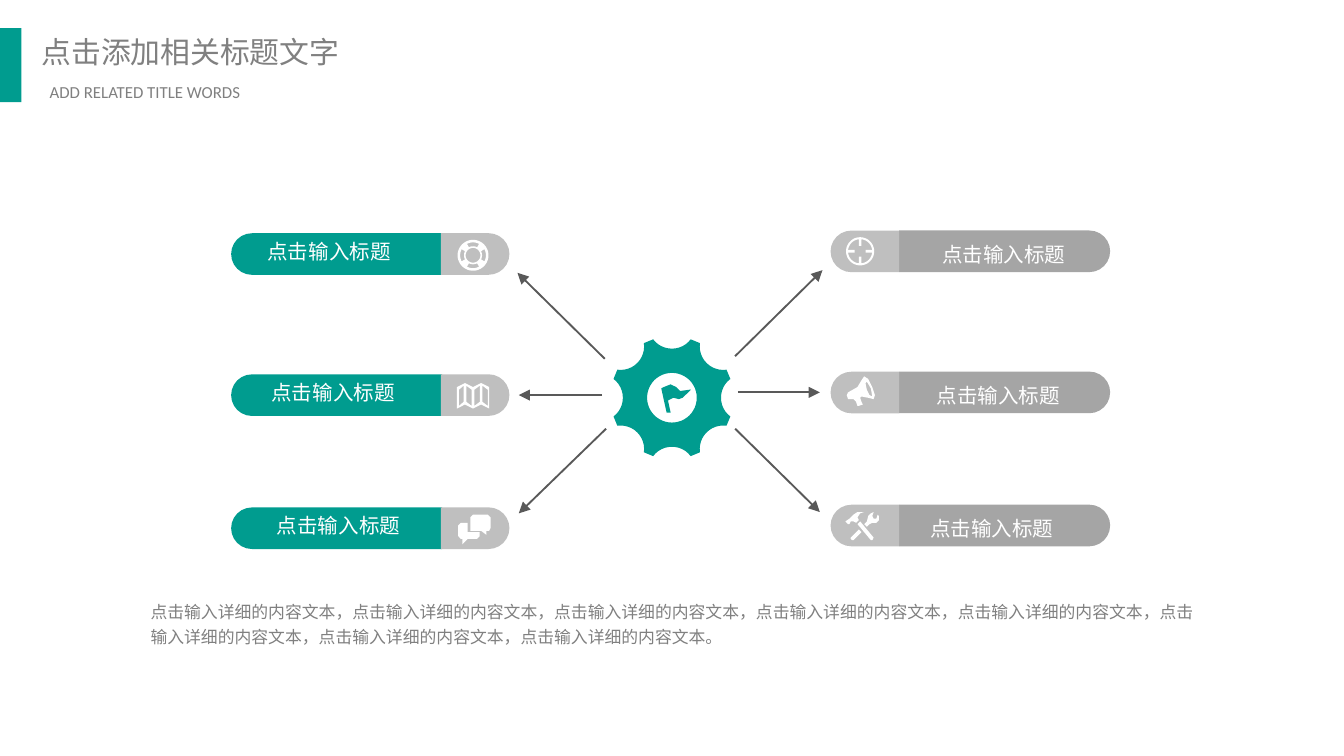
from dataclasses import dataclass
from math import cos, radians, sin

from lxml import etree
from pptx import Presentation, util as u
from pptx.dml.color import RGBColor
from pptx.enum import shapes, text
from pptx.oxml.ns import qn


@dataclass(frozen=True)
class Theme:
    teal: str = "009C8F"
    gray: str = "A5A5A5"
    pale: str = "BFBFBF"
    ink: str = "808080"
    arrow: str = "595959"
    white: str = "FFFFFF"
    cjk: str = "Noto Sans CJK SC"
    latin: str = "Calibri"
    title: float = 16
    label: float = 11
    small: float = 9


THEME = Theme()
WIDTH = 10
HEIGHT = WIDTH * 9 / 16
PILL_HEIGHT, PILL_LENGTH, CAP_LENGTH = 0.31, 1.57, 0.51
LEFT_ROWS, RIGHT_ROWS = (1.89, 2.94, 3.93), (1.87, 2.92, 3.91)
LABEL = "点击输入标题"
DETAIL = "，".join(["点击输入详细的内容文本"] * 8) + "。"
TITLE_INSETS = (0.08, 0.04, 0.08, 0.04)
LABEL_INSETS = (0.12, 0.06, 0.12, 0.06)

# Icon outlines in inches on the slide; a later outline inside an earlier one is a hole.
FLAG = [[(5.13, 2.9), (5.06, 2.91), (5.03, 2.88), (4.99, 2.86), (4.94, 2.88),
         (4.92, 2.89), (4.96, 3.07), (4.99, 3.07), (4.97, 2.98), (5.01, 2.96),
         (5.05, 2.97), (5.08, 2.96), (5.14, 2.9)]]
CHAT = [[(3.48, 3.96), (3.48, 3.89), (3.43, 3.89), (3.41, 3.91), (3.41, 3.99), (3.43, 4.01),
         (3.44, 4.01), (3.44, 4.05), (3.48, 4.01), (3.55, 4.01), (3.57, 3.99), (3.57, 3.96)],
        [(3.63, 3.83), (3.52, 3.83), (3.5, 3.85), (3.5, 3.95), (3.58, 3.95), (3.62, 3.98),
         (3.62, 3.95), (3.64, 3.95), (3.65, 3.93), (3.65, 3.85)]]
TOOLS = [[(6.33, 3.88), (6.35, 3.88), (6.37, 3.89), (6.39, 3.87), (6.38, 3.85), (6.4, 3.82),
          (6.43, 3.81), (6.38, 3.81), (6.35, 3.83), (6.33, 3.85), (6.32, 3.86), (6.29, 3.88),
          (6.31, 3.9), (6.32, 3.9)],
         [(6.4, 3.88), (6.38, 3.9), (6.48, 4.02), (6.49, 4.02), (6.5, 4)],
         [(6.54, 3.84), (6.53, 3.83), (6.52, 3.86), (6.5, 3.86), (6.49, 3.84), (6.5, 3.81),
          (6.48, 3.82), (6.46, 3.84), (6.45, 3.88), (6.43, 3.9), (6.45, 3.92), (6.47, 3.9),
          (6.49, 3.89), (6.52, 3.89), (6.54, 3.87)],
         [(6.33, 4), (6.33, 4.01), (6.34, 4.02), (6.35, 4.02), (6.41, 3.96), (6.39, 3.94)]]
MEGAPHONE = [[(6.49, 2.88), (6.46, 2.82), (6.43, 2.8), (6.41, 2.83), (6.38, 2.88), (6.31, 2.92),
              (6.3, 2.94), (6.31, 2.97), (6.35, 2.97), (6.37, 2.99), (6.38, 3.02), (6.39, 3.02),
              (6.42, 3.01), (6.41, 2.99), (6.4, 2.96), (6.41, 2.95), (6.46, 2.96), (6.5, 2.97),
              (6.51, 2.94)],
             [(6.49, 2.95), (6.47, 2.94), (6.45, 2.9), (6.44, 2.85), (6.45, 2.84), (6.48, 2.89)]]


def arc(center, radius, start, end, steps=12):
    """Points along an arc, with angles in degrees."""
    angles = [radians(start + (end - start) * i / steps) for i in range(steps + 1)]
    return [(center[0] + radius * cos(a), center[1] + radius * sin(a)) for a in angles]


def turn(center, points, degrees):
    """Rotate points given around (0, 0) and place them at center."""
    c, s = cos(radians(degrees)), sin(radians(degrees))
    return [(center[0] + x * c - y * s, center[1] + x * s + y * c) for x, y in points]


def disc(center, radius):
    return arc(center, radius, 0, 360, 48)


def gear(center):
    notch = arc((0.54, 0), 0.175, 233, 127)
    rim = [point for k in range(8) for point in turn(center, notch, 45 * k)]
    return [rim, disc(center, 0.185)]


def lifebuoy(center):
    window = arc((0, 0), 0.096, -28, 28) + arc((0, 0), 0.067, 27, -27)
    windows = [turn(center, window, 90 * k) for k in range(4)]
    return [disc(center, 0.115), disc(center, 0.055)] + windows


def crosshair(center):
    quarter = arc((0, 0), 0.09, 6, 84) + [(0.01, 0.04), (-0.01, 0.04)]
    opening = [point for k in range(4) for point in turn(center, quarter, 90 * k)]
    return [disc(center, 0.105), opening]


def folded_map(left, top):
    """Four slanted panels, each with an inner opening."""
    folds = [(left + 0.06 * i, top + (0 if i % 2 else 0.03)) for i in range(5)]
    outlines = [folds + [(x, y + 0.16) for x, y in reversed(folds)]]
    for i, ((x1, y1), (x2, y2)) in enumerate(zip(folds, folds[1:])):
        x1, x2 = x1 + (0.015 if i == 0 else 0.01), x2 - 0.01
        outlines.append([(x1, y1 + 0.02), (x2, y2 + 0.02), (x2, y2 + 0.14), (x1, y1 + 0.14)])
    return outlines


def paint(shape, color):
    shape.fill.solid()
    shape.fill.fore_color.rgb = RGBColor.from_string(color)
    shape.line.fill.background()
    shape.shadow.inherit = False


def add_outline(slide, outlines, color):
    first, *others = [[(u.Inches(x), u.Inches(y)) for x, y in line] for line in outlines]
    builder = slide.shapes.build_freeform(*first[0], scale=1.0)
    builder.add_line_segments(first[1:], close=True)
    for line in others:
        builder.move_to(*line[0])
        builder.add_line_segments(line[1:], close=True)
    paint(builder.convert_to_shape(), color)


def add_half_pill(slide, left, middle, length, angle, color):
    """Bar with one round end: angle 90 rounds the right end, 270 the left."""
    shape = slide.shapes.add_shape(
        shapes.MSO_SHAPE.ROUND_2_SAME_RECTANGLE,
        u.Inches(left + (length - PILL_HEIGHT) / 2), u.Inches(middle - length / 2),
        u.Inches(PILL_HEIGHT), u.Inches(length))
    shape.adjustments[0], shape.adjustments[1] = 0.5, 0
    shape.rotation = angle
    paint(shape, color)


def add_arrow(slide, start, end):
    arrow = slide.shapes.add_connector(
        shapes.MSO_CONNECTOR.STRAIGHT, *(u.Inches(v) for v in (*start, *end)))
    arrow.line.color.rgb = RGBColor.from_string(THEME.arrow)
    arrow.line.width = u.Pt(1)
    line = arrow._element.spPr.find(qn("a:ln"))
    etree.SubElement(line, qn("a:tailEnd"), type="triangle")
    etree.SubElement(arrow._element.spPr, qn("a:effectLst"))


def write(box, area, words, size, color, font=THEME.cjk, insets=TITLE_INSETS,
          align=text.PP_ALIGN.LEFT, wrap=False):
    """Place a text box or placeholder and fill it with one paragraph."""
    box.left, box.top, box.width, box.height = (u.Inches(v) for v in area)
    frame = box.text_frame
    frame.margin_left, frame.margin_top, frame.margin_right, frame.margin_bottom = (
        u.Inches(v) for v in insets)
    frame.word_wrap = wrap
    frame.auto_size = text.MSO_AUTO_SIZE.NONE
    frame.vertical_anchor = text.MSO_ANCHOR.TOP
    para = frame.paragraphs[0]
    para.alignment = align
    span = para.add_run()
    span.text = words
    span.font.size = u.Pt(size)
    span.font.color.rgb = RGBColor.from_string(color)
    span.font.name = font
    etree.SubElement(span._r.get_or_add_rPr(), qn("a:ea"), typeface=font)
    return para


def add_text(slide, *args, **options):
    return write(slide.shapes.add_textbox(0, 0, 0, 0), *args, **options)


def add_header(slide):
    bar = slide.shapes.add_shape(shapes.MSO_SHAPE.RECTANGLE, 0, u.Inches(0.21),
                                 u.Inches(0.16), u.Inches(0.55))
    paint(bar, THEME.teal)
    write(slide.shapes.title, (0.23, 0.21, 2.4, 0.35), "点击添加相关标题文字",
          THEME.title, THEME.ink)
    add_text(slide, (0.29, 0.57, 2.23, 0.23), "ADD RELATED TITLE WORDS", THEME.small,
             THEME.ink, font=THEME.latin, align=text.PP_ALIGN.JUSTIFY, wrap=True)


def add_detail(slide):
    para = write(slide.placeholders[1], (1.04, 4.4, 8.05, 0.46), DETAIL, THEME.small,
                 THEME.ink, insets=(0.08, 0.04, 0.12, 0.03), wrap=True)
    para.line_spacing = u.Pt(13.5)
    para.space_before = u.Pt(0)
    properties = para._p.get_or_add_pPr()
    properties.set("marL", "0")
    properties.set("indent", "0")
    etree.SubElement(properties, qn("a:buNone"))


def main():
    deck = Presentation()
    deck.slide_width, deck.slide_height = u.Inches(WIDTH), u.Inches(HEIGHT)
    # The template's 4:3 size type would contradict the new size.
    deck.element.find(qn("p:sldSz")).attrib.pop("type", None)
    slide = deck.slides.add_slide(deck.slide_layouts[1])
    add_header(slide)
    for start, end in [((5.47, 2.65), (6.12, 2.01)), ((5.49, 2.92), (6.1, 2.92)),
                       ((5.47, 3.19), (6.1, 3.81)), ((4.5, 2.67), (3.85, 2.03)),
                       ((4.48, 2.94), (3.86, 2.94)), ((4.51, 3.19), (3.86, 3.82))]:
        add_arrow(slide, start, end)
    for icon in (gear((5, 2.96)), FLAG):
        add_outline(slide, icon, THEME.teal)
    for middle, label_left in zip(LEFT_ROWS, (1.86, 1.89, 1.93)):
        add_half_pill(slide, 1.72, middle, PILL_LENGTH, 270, THEME.teal)
        add_half_pill(slide, 3.28, middle, CAP_LENGTH, 90, THEME.pale)
        add_text(slide, (label_left, middle - 0.17, 1.17, 0.31), LABEL, THEME.label,
                 THEME.white, insets=LABEL_INSETS, align=text.PP_ALIGN.RIGHT)
    for middle, label_left in zip(RIGHT_ROWS, (6.89, 6.85, 6.8)):
        add_half_pill(slide, 6.69, middle, PILL_LENGTH, 90, THEME.gray)
        add_half_pill(slide, 6.18, middle, CAP_LENGTH, 270, THEME.pale)
        add_text(slide, (label_left, middle - 0.13, 1.17, 0.31), LABEL, THEME.label,
                 THEME.white, insets=LABEL_INSETS)
    for icon in (lifebuoy((3.52, 1.9)), folded_map(3.4, 2.85), CHAT,
                 crosshair((6.4, 1.87)), MEGAPHONE, TOOLS):
        add_outline(slide, icon, THEME.white)
    add_detail(slide)
    deck.save("out.pptx")


if __name__ == "__main__":
    main()
